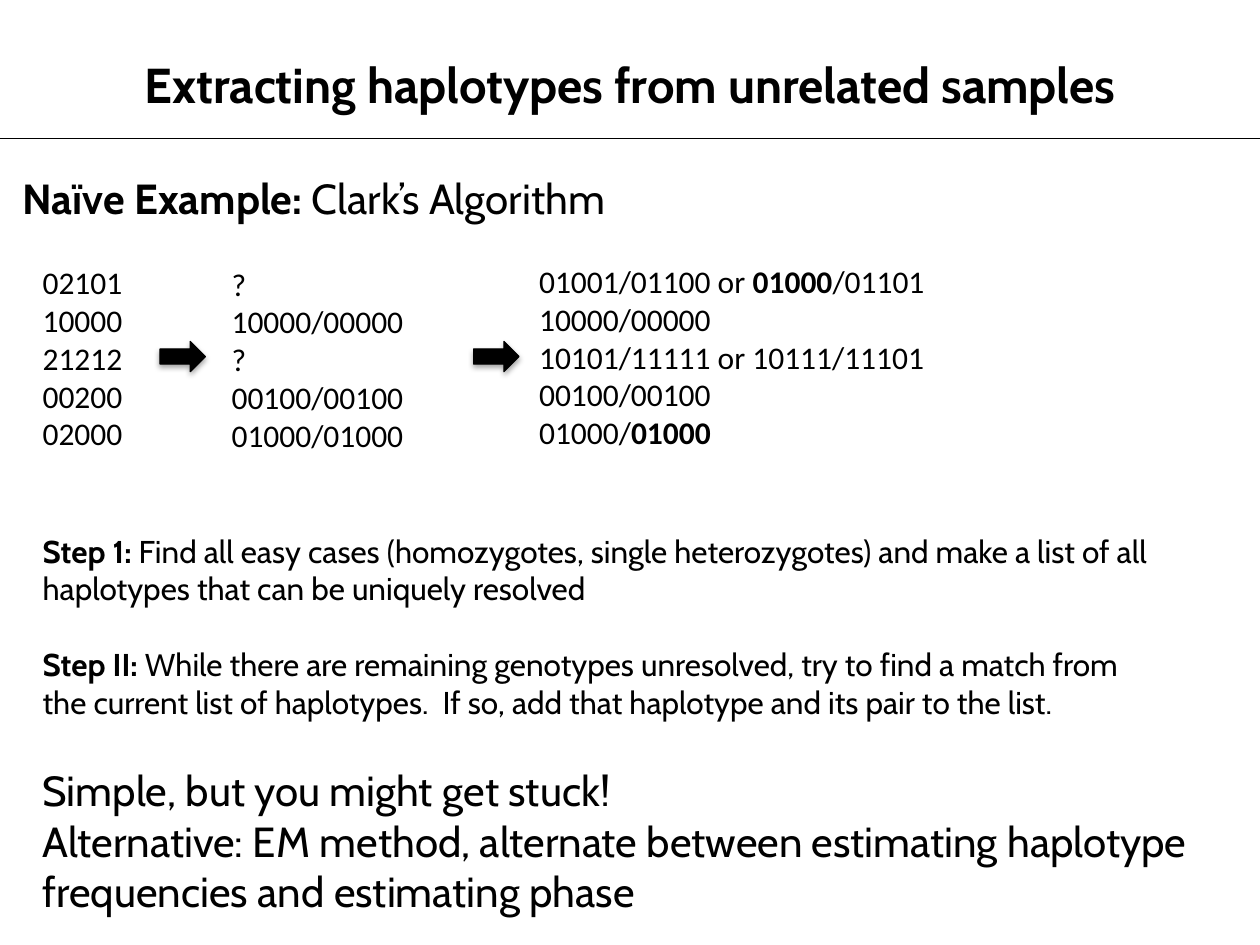
from lxml import etree
from pptx import Presentation
from pptx.dml.color import RGBColor
from pptx.enum.shapes import MSO_CONNECTOR, MSO_SHAPE
from pptx.enum.text import MSO_AUTO_SIZE, PP_ALIGN
from pptx.oxml import parse_xml
from pptx.oxml.ns import nsdecls, qn
from pptx.util import Inches, Pt

BLACK = RGBColor(0x00, 0x00, 0x00)
STRAIGHT = MSO_CONNECTOR.STRAIGHT
RIGHT_ARROW = MSO_SHAPE.RIGHT_ARROW
FIT_SHAPE = MSO_AUTO_SIZE.SHAPE_TO_FIT_TEXT
LEFT, CENTER = PP_ALIGN.LEFT, PP_ALIGN.CENTER

SHADOW_XML = (
    f'<a:effectLst {nsdecls("a")}>'
    '<a:outerShdw blurRad="40000" dist="23000" dir="5400000" rotWithShape="0">'
    '<a:srgbClr val="000000"><a:alpha val="35000"/></a:srgbClr>'
    '</a:outerShdw></a:effectLst>'
)


class SlideBuilder:
    prose_font = "Cabin"
    data_font = "Calibri"
    line_width = Pt(0.75)

    def __init__(self, slide):
        self.slide = slide

    def text(self, box, paragraphs, size, font=prose_font, align=LEFT, wrap=True):
        """Each paragraph is a list of (text, bold) runs."""
        shape = self.slide.shapes.add_textbox(*map(Inches, box))
        frame = shape.text_frame
        frame.word_wrap = wrap
        frame.auto_size = FIT_SHAPE
        for index, runs in enumerate(paragraphs):
            paragraph = frame.add_paragraph() if index else frame.paragraphs[0]
            paragraph.alignment = align
            for content, bold in runs:
                run = paragraph.add_run()
                run.text = content
                run.font.name = font
                run.font.size = Pt(size)
                run.font.bold = bold
                run.font.color.rgb = BLACK

    def data_column(self, box, paragraphs):
        self.text(box, paragraphs, 18, self.data_font, wrap=False)

    def rule(self, y, width):
        line = self.slide.shapes.add_connector(
            STRAIGHT, 0, Inches(y), Inches(width), Inches(y))
        line.line.color.rgb = BLACK
        line.line.width = self.line_width
        etree.SubElement(line._element.spPr, qn("a:effectLst"))

    def arrow(self, left, top, width=0.36, height=0.24):
        shape = self.slide.shapes.add_shape(
            RIGHT_ARROW, *map(Inches, (left, top, width, height)))
        shape.fill.solid()
        shape.fill.fore_color.rgb = BLACK
        shape.line.color.rgb = BLACK
        shape.line.width = self.line_width
        shape._element.spPr.append(parse_xml(SHADOW_XML))


def plain(*lines):
    return [[(line, False)] for line in lines]


def main():
    presentation = Presentation()
    presentation.slide_width = Inches(10)
    presentation.slide_height = Inches(7.5)
    builder = SlideBuilder(
        presentation.slides.add_slide(presentation.slide_layouts[6]))

    # Title and heading
    builder.rule(1.1, 10)
    builder.text((0, 0.38, 10, 0.57),
                 [[("Extracting haplotypes from unrelated samples", True)]],
                 28, align=CENTER)
    builder.text((0.08, 1.32, 5.32, 0.5),
                 [[("Naïve Example: ", True), ("Clark’s Algorithm", False)]],
                 24, wrap=False)

    # Genotypes, easy cases, resolved haplotypes
    builder.data_column((0.24, 2.04, 0.84, 1.62),
                        plain("02101", "10000", "21212", "00200", "02000"))
    builder.data_column((1.74, 2.05, 1.6, 1.62),
                        plain("?", "10000/00000", "?", "00100/00100", "01000/01000"))
    builder.data_column((4.18, 2.03, 3.29, 1.62), [
        [("01001/01100 or ", False), ("01000", True), ("/01101", False)],
        *plain("10000/00000", "10101/11111 or 10111/11101", "00100/00100"),
        [("01000/", False), ("01000", True)],
    ])
    for left in (1.27, 3.76):
        builder.arrow(left, 2.71)

    # Steps
    builder.text((0.24, 4.17, 9.19, 0.71), [[
        ("Step 1:", True),
        (" Find all easy cases (homozygotes, single heterozygotes) and make a list "
         "of all haplotypes that can be uniquely resolved", False),
    ]], 18)
    builder.text((0.24, 5.07, 8.91, 0.71), [[
        ("Step II: ", True),
        ("While there are remaining genotypes unresolved, try to find a match from "
         "the current list of haplotypes.  If so, add that haplotype and its pair "
         "to the list.", False),
    ]], 18)

    # Conclusion
    builder.text((0.24, 6.02, 9.28, 1.31), plain(
        "Simple, but you might get stuck!",
        "Alternative: EM method, alternate between estimating haplotype "
        "frequencies and estimating phase"), 24)

    presentation.save("out.pptx")


if __name__ == "__main__":
    main()
